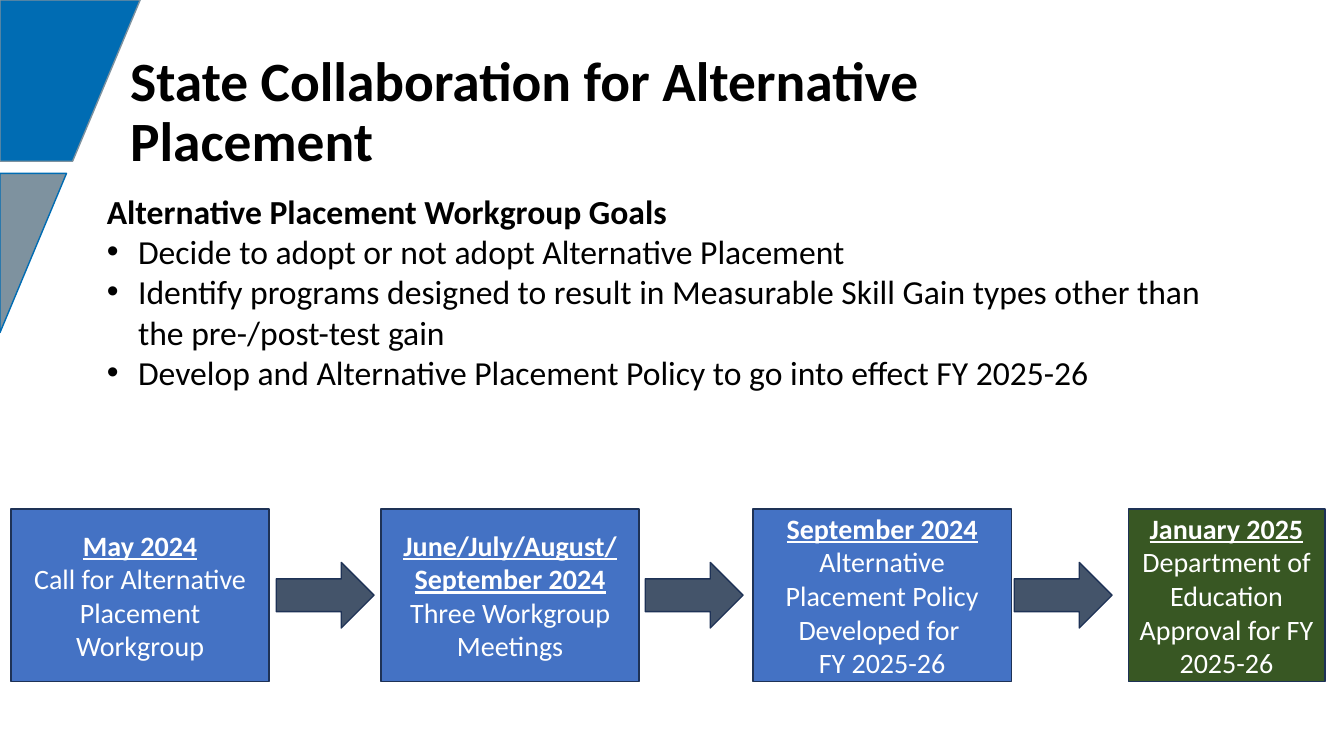
from dataclasses import dataclass

from lxml import etree
from pptx import Presentation
from pptx import util as u
from pptx.dml.color import RGBColor
from pptx.enum import shapes, text
from pptx.oxml.ns import qn


@dataclass(frozen=True)
class Theme:
    font: str = "Calibri"
    black: str = "000000"
    white: str = "FFFFFF"
    blue: str = "006CB3"
    gray: str = "7E929F"
    step: str = "4472C4"
    approval: str = "385723"
    arrow: str = "44546A"
    outline: str = "1E3256"
    title_size: float = 39.6
    body_size: float = 24
    step_size: float = 20


def write(paragraph, content, *, theme, size, color, bold=False, underline=False,
          align=text.PP_ALIGN.LEFT, spacing=1.0, hang=0, bullet=None):
    """Fill a paragraph, turning newlines into line breaks."""
    props = paragraph._p.get_or_add_pPr()
    props.set("marL", str(u.Inches(hang)))
    props.set("indent", str(-u.Inches(hang)))
    if bullet:
        etree.SubElement(props, qn("a:buFont")).set("typeface", "Arial")
        etree.SubElement(props, qn("a:buChar")).set("char", bullet)
    else:
        etree.SubElement(props, qn("a:buNone"))
    paragraph.alignment = align
    paragraph.line_spacing = spacing
    paragraph.space_before = paragraph.space_after = u.Pt(0)
    for index, line in enumerate(content.split("\n")):
        if index:
            paragraph.add_line_break()
        run = paragraph.add_run()
        run.text = line
        run.font.name = theme.font
        run.font.size = u.Pt(size)
        run.font.bold = bold
        run.font.underline = underline
        run.font.color.rgb = RGBColor.from_string(color)


class SlideBuilder:
    def __init__(self, slide, theme):
        self.slide = slide
        self.theme = theme

    def paint(self, shape, fill, line):
        shape.shadow.inherit = False
        shape.fill.solid()
        shape.fill.fore_color.rgb = RGBColor.from_string(fill)
        shape.line.color.rgb = RGBColor.from_string(line)
        shape.line.width = u.Pt(1)

    def panel(self, points, fill, line):
        corners = [(u.Inches(x), u.Inches(y)) for x, y in points]
        outline = self.slide.shapes.build_freeform(*corners[0])
        outline.add_line_segments(corners[1:], close=True)
        self.paint(outline.convert_to_shape(), fill, line)

    def place(self, holder, box, anchor):
        holder.left, holder.top, holder.width, holder.height = map(u.Inches, box)
        frame = holder.text_frame
        frame.word_wrap = True
        frame.auto_size = text.MSO_AUTO_SIZE.NONE
        frame.vertical_anchor = anchor
        return frame

    def title(self, content, box):
        frame = self.place(self.slide.shapes.title, box, text.MSO_ANCHOR.MIDDLE)
        write(frame.paragraphs[0], content, theme=self.theme, bold=True, spacing=0.9,
              size=self.theme.title_size, color=self.theme.black)

    def goals(self, heading, items, box):
        frame = self.place(self.slide.placeholders[1], box, text.MSO_ANCHOR.TOP)
        style = dict(theme=self.theme, size=self.theme.body_size, color=self.theme.black)
        write(frame.paragraphs[0], heading, bold=True, **style)
        for item in items:
            write(frame.add_paragraph(), item, hang=0.31, bullet="•", **style)

    def block(self, kind, box, fill):
        shape = self.slide.shapes.add_shape(kind, *map(u.Inches, box))
        self.paint(shape, fill, self.theme.outline)
        return shape

    def step(self, date, action, box, fill):
        frame = self.block(shapes.MSO_SHAPE.RECTANGLE, box, fill).text_frame
        frame.word_wrap = True
        frame.vertical_anchor = text.MSO_ANCHOR.MIDDLE
        style = dict(theme=self.theme, size=self.theme.step_size, color=self.theme.white,
                     align=text.PP_ALIGN.CENTER)
        write(frame.paragraphs[0], date, bold=True, underline=True, **style)
        write(frame.add_paragraph(), action, **style)

    def arrow(self, box):
        self.block(shapes.MSO_SHAPE.RIGHT_ARROW, box, self.theme.arrow)


def main():
    deck = Presentation()
    deck.slide_width, deck.slide_height = u.Inches(13.33), u.Inches(7.5)
    theme = Theme()
    builder = SlideBuilder(deck.slides.add_slide(deck.slide_layouts[1]), theme)

    # Slanted panels on the left edge
    builder.panel([(0, 0), (1.39, 0), (0.72, 1.6), (0, 1.6)], theme.blue, theme.gray)
    builder.panel([(0, 1.72), (0.66, 1.72), (0, 3.3)], theme.gray, theme.blue)

    # Title and goals
    builder.title("State Collaboration for Alternative Placement", (1.19, 0.64, 10.18, 0.98))
    builder.goals(
        "Alternative Placement Workgroup Goals",
        ["Decide to adopt or not adopt Alternative Placement",
         "Identify programs designed to result in Measurable Skill Gain types other than "
         "the pre-/post-test gain",
         "Develop and Alternative Placement Policy to go into effect FY 2025-26"],
        (0.96, 1.84, 11.4, 2.12))

    # Timeline steps
    timeline = [
        (0.11, 2.56, theme.step, "May 2024", "Call for Alternative Placement Workgroup"),
        (3.78, 2.56, theme.step, "June/July/August/\nSeptember 2024",
         "Three Workgroup Meetings"),
        (7.47, 2.56, theme.step, "September 2024",
         "Alternative Placement Policy Developed for \nFY 2025-26"),
        (11.19, 1.95, theme.approval, "January 2025",
         "Department of Education Approval for FY 2025-26"),
    ]
    for left, width, fill, date, action in timeline:
        builder.step(date, action, (left, 5.05, width, 1.71), fill)

    # Arrows between the steps
    for index in range(len(timeline) - 1):
        builder.arrow((2.74 + 3.66 * index, 5.58, 0.97, 0.65))

    deck.save("out.pptx")


if __name__ == "__main__":
    main()
